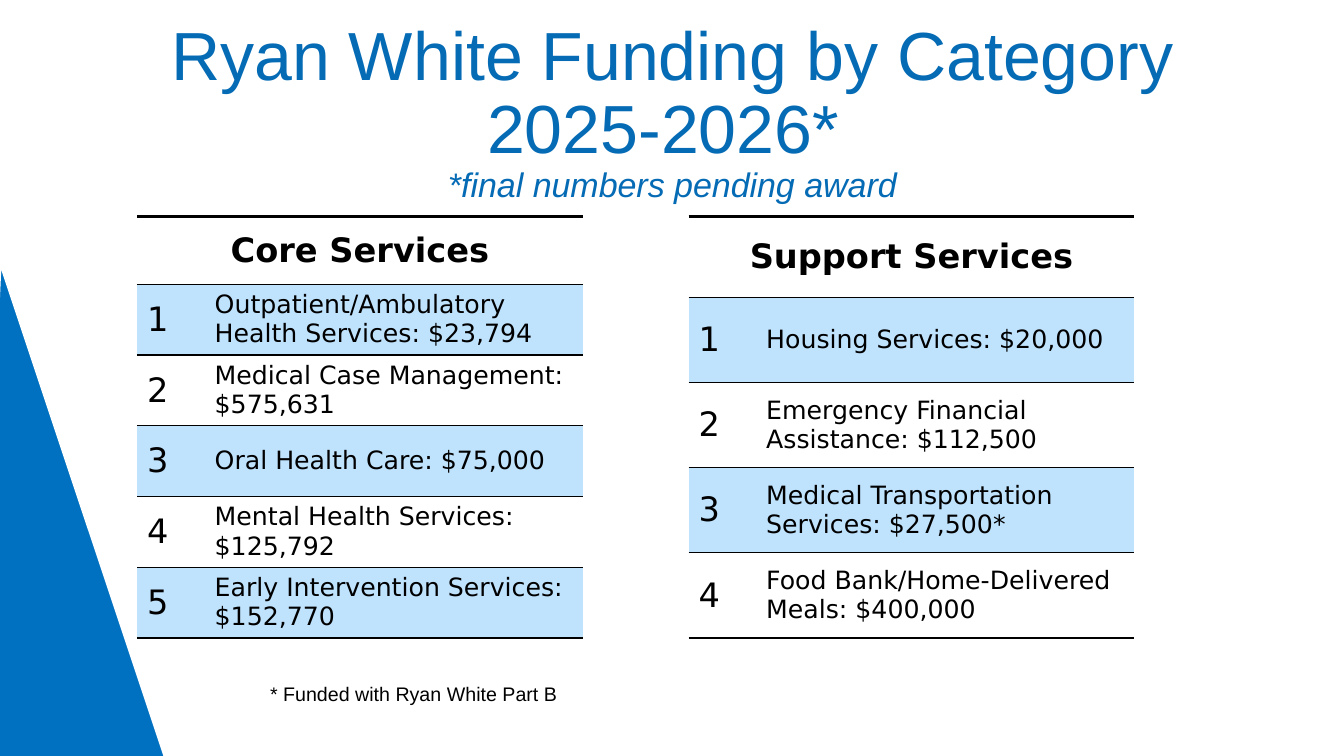
"""Build the slide on Ryan White funding by service category."""
from lxml.etree import SubElement
from pptx import Presentation
from pptx.dml.color import RGBColor
from pptx.enum.text import MSO_ANCHOR as Anchor, PP_ALIGN as Align
from pptx.oxml.ns import qn
from pptx.util import Inches, Pt

TITLE = [
    ("Ryan White Funding by Category", 48.6, False),
    ("2025-2026* ", 48.6, False),
    ("*final numbers pending award", 24.3, True),
]
SERVICES = [
    ("Core Services", 0.67, [
        "Outpatient/Ambulatory Health Services: $23,794",
        "Medical Case Management: $575,631",
        "Oral Health Care: $75,000",
        "Mental Health Services: $125,792",
        "Early Intervention Services: $152,770",
    ]),
    ("Support Services", 0.8, [
        "Housing Services: $20,000",
        "Emergency Financial Assistance: $112,500",
        "Medical Transportation Services: $27,500*",
        "Food Bank/Home-Delivered Meals: $400,000",
    ]),
]
FOOTNOTE = "* Funded with Ryan White Part B"
WEDGE = [(-0.08, 7.65), (-0.08, 3.18), (-0.04, 2.3), (1.74, 7.64)]
COLORS = {"title": "056BB5", "wedge": "0070C0", "band": "C0E3FD",
          "text": "000000", "edge": "FFFFFF"}
TITLE_FONT, TABLE_FONT = "Arial", "DejaVu Sans"
TABLE_LEFT, TABLE_TOP, TABLE_PITCH, TABLE_HEIGHT = 1.36, 2.15, 5.47, 4.18
COLUMNS = (0.67, 3.75)


def color(name):
    return RGBColor.from_string(COLORS[name])


def style(paragraph, size, font, tint, bold=False, italic=False):
    for run in paragraph.runs:
        run.font.size, run.font.name = Pt(size), font
        run.font.bold, run.font.italic = bold, italic
        run.font.color.rgb = color(tint)


def add_text(slide, left, top, width, height):
    frame = slide.shapes.add_textbox(*map(Inches, (left, top, width, height))).text_frame
    frame.word_wrap = True
    return frame


def add_title(slide):
    frame = add_text(slide, 0.92, 0.4, 11.5, 1.45)
    frame.vertical_anchor = Anchor.MIDDLE
    frame.text = "\n".join(line for line, _, _ in TITLE)
    for paragraph, (_, size, italic) in zip(frame.paragraphs, TITLE):
        paragraph.alignment, paragraph.line_spacing = Align.CENTER, 0.9
        style(paragraph, size, TITLE_FONT, "title", italic=italic)


def add_wedge(slide):
    start, *corners = [(Inches(x), Inches(y)) for x, y in WEDGE]
    builder = slide.shapes.build_freeform(*start)
    builder.add_line_segments(corners, close=True)
    wedge = builder.convert_to_shape()
    wedge.shadow.inherit = False
    wedge.fill.solid()
    wedge.fill.fore_color.rgb = color("wedge")
    wedge.line.color.rgb = color("edge")
    wedge.line.width = Pt(10)


def set_borders(cell, top, bottom):
    properties = cell._tc.get_or_add_tcPr()
    for side, width in (("L", 0), ("R", 0), ("T", top), ("B", bottom)):
        line = SubElement(properties, qn(f"a:ln{side}"), w=str(Pt(width)))
        if width:
            SubElement(SubElement(line, qn("a:solidFill")), qn("a:srgbClr"), val=COLORS["text"])
        else:
            SubElement(line, qn("a:noFill"))


def fill_cell(cell, text, size, banded=False, heading=False):
    set_borders(cell, 2.25 if heading else 1, 1)
    if banded:
        cell.fill.solid()
        cell.fill.fore_color.rgb = color("band")
    else:
        cell.fill.background()
    cell.vertical_anchor = Anchor.MIDDLE
    cell.text_frame.text = text
    paragraph = cell.text_frame.paragraphs[0]
    paragraph.alignment = Align.CENTER if heading else Align.LEFT
    style(paragraph, size, TABLE_FONT, "text", bold=heading)


def add_services(slide, left, heading, heading_height, services):
    table = slide.shapes.add_table(
        len(services) + 1, len(COLUMNS), Inches(left), Inches(TABLE_TOP),
        Inches(sum(COLUMNS)), Inches(TABLE_HEIGHT)).table
    table.first_row = table.horz_banding = False
    for column, width in zip(table.columns, COLUMNS):
        column.width = Inches(width)
    service_height = (TABLE_HEIGHT - heading_height) / len(services)
    for number, row in enumerate(table.rows):
        row.height = Inches(service_height if number else heading_height)
    table.cell(0, 0).merge(table.cell(0, 1))
    for column, text in enumerate((heading, "")):
        fill_cell(table.cell(0, column), text, 24, heading=True)
    for number, service in enumerate(services, 1):
        for column, (text, size) in enumerate(((str(number), 24), (service, 18))):
            fill_cell(table.cell(number, column), text, size, banded=number % 2 == 1)


def main():
    deck = Presentation()
    deck.slide_width, deck.slide_height = Inches(13.33), Inches(7.5)
    slide = deck.slides.add_slide(deck.slide_layouts[6])
    add_title(slide)
    add_wedge(slide)
    for position, group in enumerate(SERVICES):
        add_services(slide, TABLE_LEFT + position * TABLE_PITCH, *group)
    footnote = add_text(slide, 2.58, 6.72, 6.58, 0.34)
    footnote.text = FOOTNOTE
    style(footnote.paragraphs[0], 14, TITLE_FONT, "text")
    deck.save("out.pptx")


if __name__ == "__main__":
    main()
